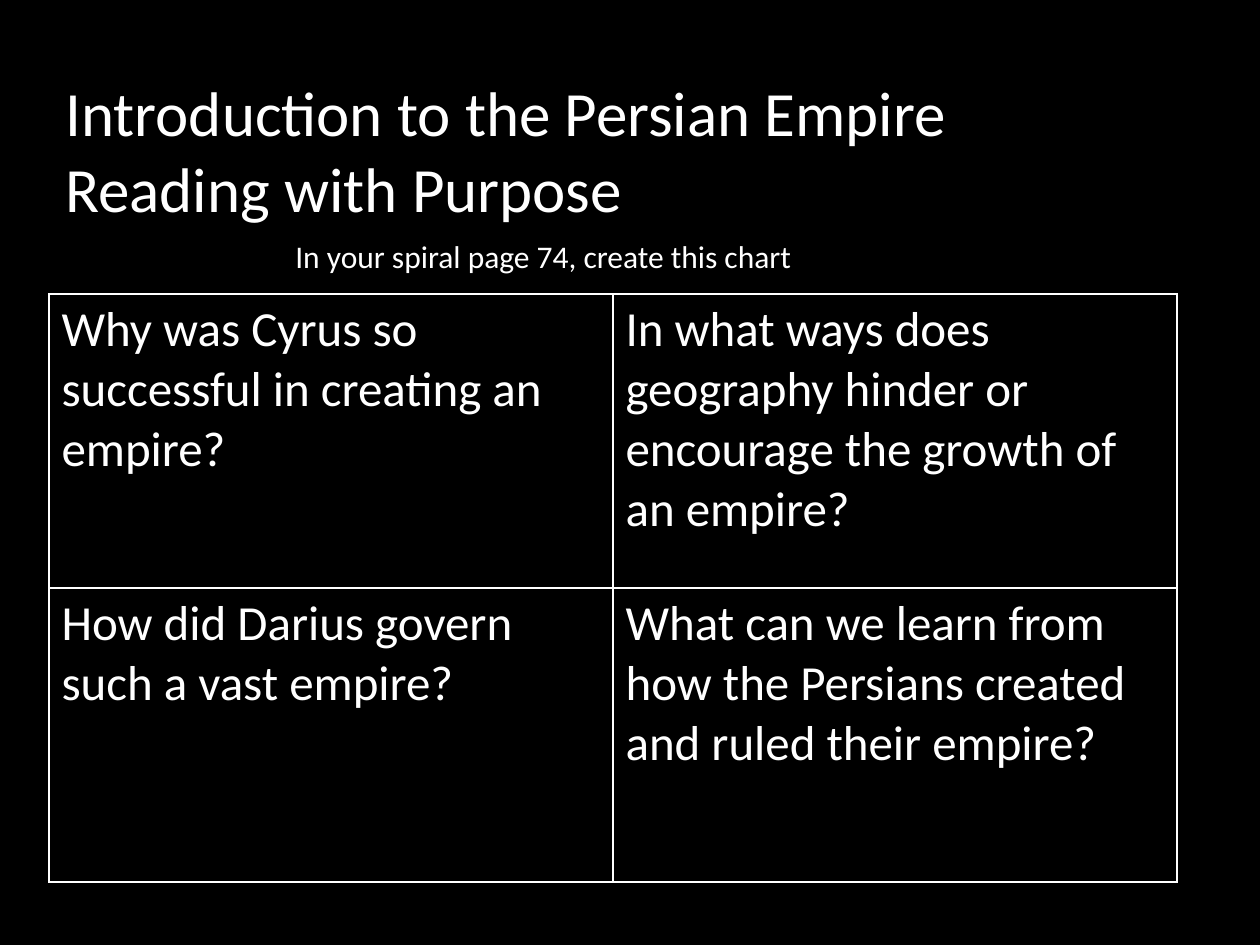
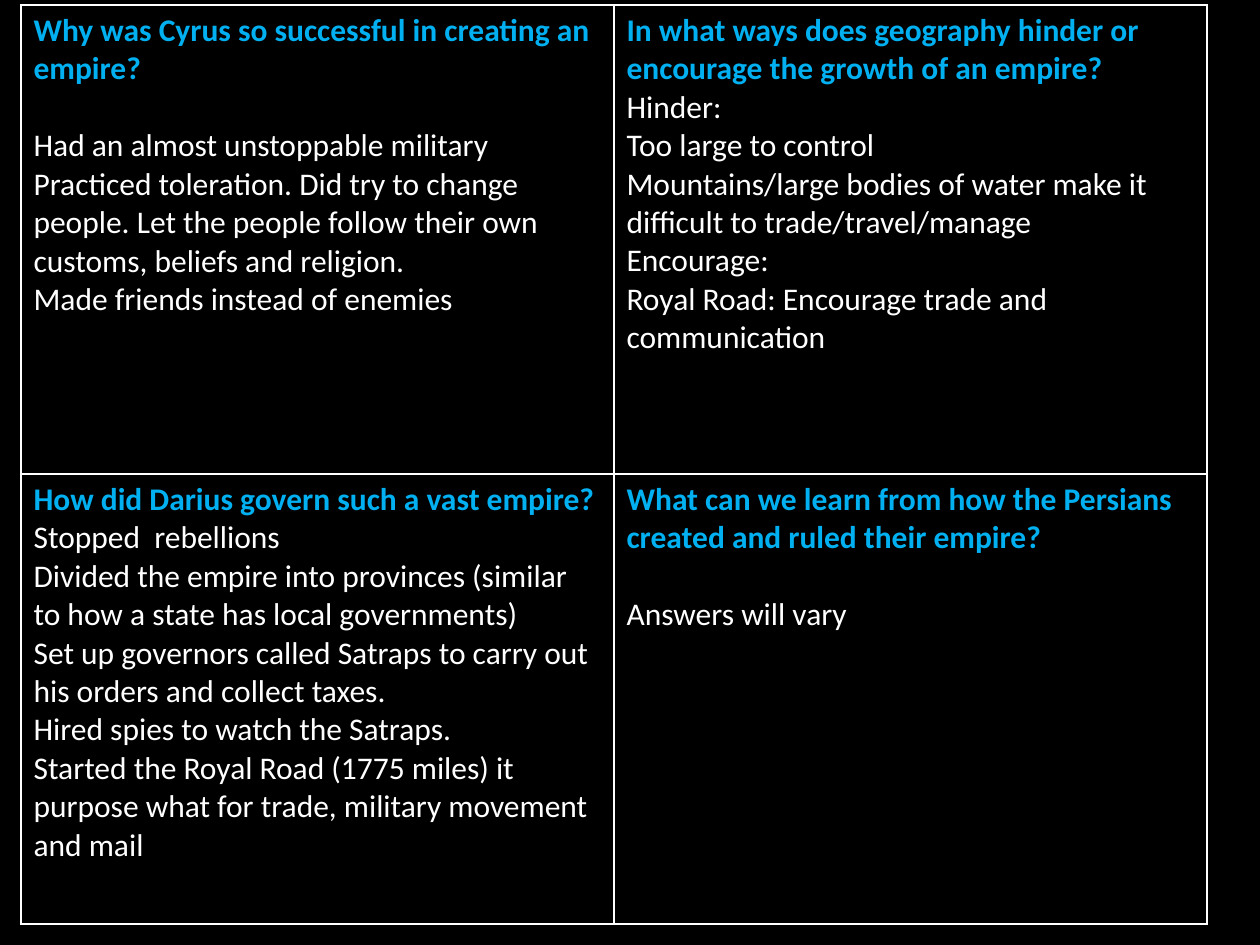
from lxml import etree
from pptx import Presentation
from pptx.dml import color
from pptx.enum import text
from pptx.oxml import ns
from pptx import util as u

PX = u.Inches(1) / 126
BLACK, WHITE, BLUE = "000000", "FFFFFF", "00B0F0"

QUESTIONS = [
    "Why was Cyrus so successful in creating an empire?",
    "In what ways does geography hinder or encourage the growth of an empire?",
    "How did Darius govern such a vast empire?",
    "What can we learn from how the Persians created and ruled their empire?",
]
ANSWERS = [
    ["Had an almost unstoppable military",
     "Practiced toleration. Did try to change people. Let the people follow "
     "their own customs, beliefs and religion.",
     "Made friends instead of enemies"],
    ["Hinder:",
     "Too large to control",
     "Mountains/large bodies of water make it difficult to trade/travel/manage",
     "Encourage:",
     "Royal Road: Encourage trade and communication"],
    ["Stopped  rebellions",
     "Divided the empire into provinces (similar to how a state has local governments)",
     "Set up governors called Satraps to carry out his orders and collect taxes.",
     "Hired spies to watch the Satraps.",
     "Started the Royal Road (1775 miles) it purpose what for trade, "
     "military movement and mail"],
    ["Answers will vary"],
]
ANSWER_GAPS = [22, 0, 0, 22]


def rgb(value):
    return color.RGBColor.from_string(value)


def write(tf, lines):
    tf.word_wrap = True
    for i, (words, size, hue, bold, gap) in enumerate(lines):
        p = tf.paragraphs[0] if i == 0 else tf.add_paragraph()
        if gap:
            p.space_before = u.Pt(gap)
        r = p.add_run() if "\v" not in words else None
        if r is None:
            p.text = words
        else:
            r.text = words
        for r in p.runs:
            style = {"name": "Calibri", "size": u.Pt(size), "bold": bold}
            for key, value in style.items():
                setattr(r.font, key, value)
            r.font.color.rgb = rgb(hue)


prs = Presentation()
prs.slide_width, prs.slide_height = u.Inches(10), u.Inches(7.5)

question_cells = [[(q, 28, WHITE, False, 0)] for q in QUESTIONS]
answer_cells = [
    [(q, 18, BLUE, True, 0)]
    + [(a, 18, WHITE, False, 0 if i else gap) for i, a in enumerate(answers)]
    for q, answers, gap in zip(QUESTIONS, ANSWERS, ANSWER_GAPS)
]
charts = [
    {"left": 49, "top": 294, "col": 564, "rows": [294, 294], "cells": question_cells},
    {"left": 21, "top": 5, "col": 593, "rows": [469, 450], "cells": answer_cells},
]

for chart in charts:
    s = prs.slides.add_slide(prs.slide_layouts[6])
    s.background.fill.solid()
    s.background.fill.fore_color.rgb = rgb(BLACK)
    box = [chart["left"], chart["top"], 2 * chart["col"], sum(chart["rows"])]
    table = s.shapes.add_table(2, 2, *[int(n * PX) for n in box]).table
    table.first_row = table.horz_banding = False
    for column in table.columns:
        column.width = int(chart["col"] * PX)
    for row, height in zip(table.rows, chart["rows"]):
        row.height = int(height * PX)
    for cell, lines in zip(table.iter_cells(), chart["cells"]):
        write(cell.text_frame, lines)
        tcPr = cell._tc.get_or_add_tcPr()
        for side in ("lnL", "lnR", "lnT", "lnB"):
            ln = etree.SubElement(tcPr, ns.qn(f"a:{side}"), w=str(u.Pt(1)))
            fill = etree.SubElement(ln, ns.qn("a:solidFill"))
            etree.SubElement(fill, ns.qn("a:srgbClr"), val=WHITE)
        cell.fill.background()

s = prs.slides[0]
headings = [
    ([53, 84, 1124, 147], "Introduction to the Persian Empire\vReading with Purpose",
     36, text.MSO_ANCHOR.BOTTOM),
    ([283, 231, 630, 50], "In your spiral page 74, create this chart",
     18, text.MSO_ANCHOR.TOP),
]
for box, words, size, anchor in headings:
    sp = s.shapes.add_textbox(*[int(n * PX) for n in box])
    tf = sp.text_frame
    tf.vertical_anchor = anchor
    write(tf, [(words, size, WHITE, False, 0)])

prs.save("out.pptx")
